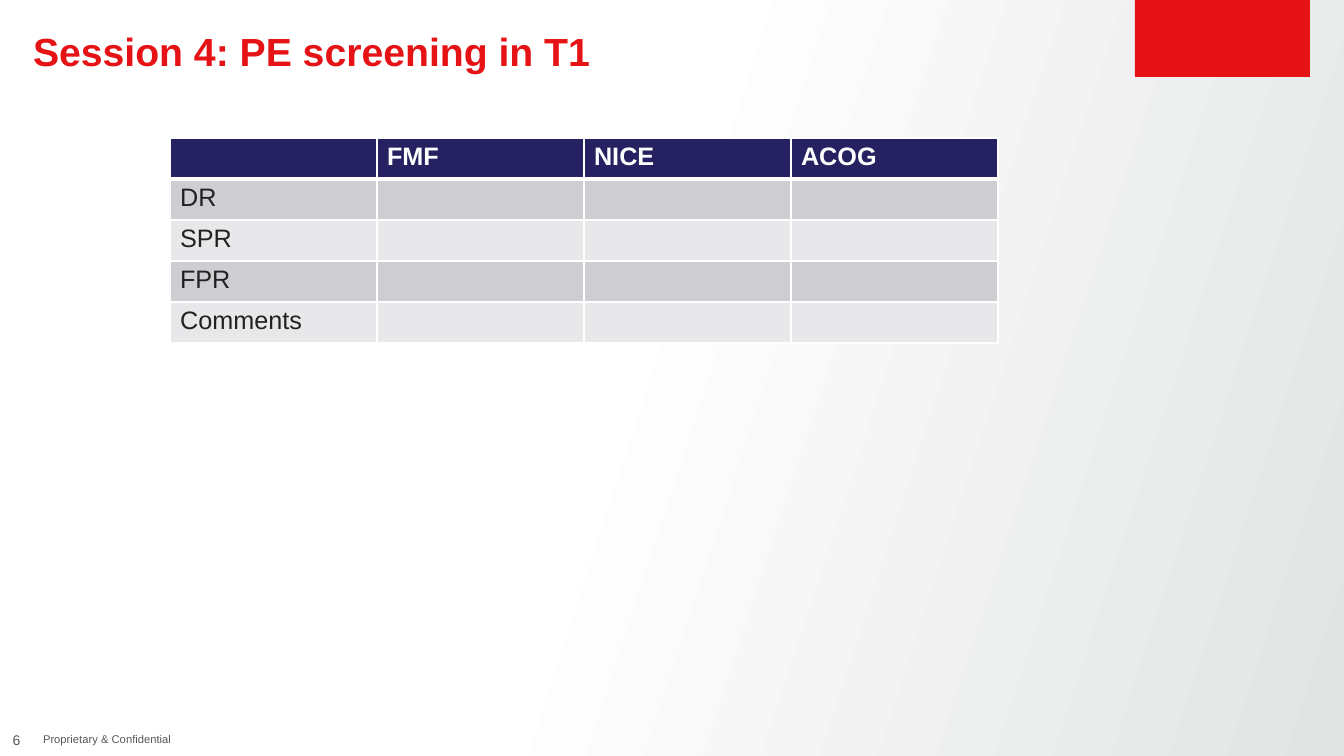
from copy import deepcopy

from lxml import etree
from pptx import Presentation
from pptx.dml.color import RGBColor
from pptx.enum.shapes import MSO_SHAPE
from pptx.enum.text import MSO_ANCHOR, PP_ALIGN
from pptx.oxml.ns import qn
from pptx.util import Emu, Pt

TOP, MIDDLE = MSO_ANCHOR.TOP, MSO_ANCHOR.MIDDLE
LEFT, CENTER = PP_ALIGN.LEFT, PP_ALIGN.CENTER
RECTANGLE = MSO_SHAPE.RECTANGLE

RED, NAVY, WHITE, GREY, INK = "E61316", "262160", "FFFFFF", "545859", "222222"
BANDS = ["CDCDD2", "E8E8EA"]
BACKGROUND_STOPS = [(0, WHITE), (0.45, WHITE), (1, "E2E3E3")]
BACKGROUND_ANGLE = 342  # counter-clockwise degrees

TITLE_FONT = {"size": 28, "bold": True, "color": RED}
NUMBER_FONT = {"size": 10, "color": GREY}
FOOTER_FONT = {"size": 8, "color": GREY}
HEADER_FONT = {"size": 18, "bold": True, "color": WHITE}
BODY_FONT = {"size": 18, "bold": False, "color": INK}

# text, box in px, font, anchor, alignment, side inset in px, line spacing
TEXTS = [
    ("Session 4: PE screening in T1", (33, 33, 1076, 42), TITLE_FONT, TOP, LEFT, 0, 0.9),
    ("6", (0, 723, 33, 33), NUMBER_FONT, MIDDLE, CENTER, 0, 1.0),
    ("Proprietary & Confidential", (33, 723, 495, 33), FOOTER_FONT, MIDDLE, LEFT, 10, 1.0),
]
RED_TAB = (1135, 0, 175, 77)

TABLE_ROWS = [
    ["", "FMF", "NICE", "ACOG"],
    ["DR", "", "", ""],
    ["SPR", "", "", ""],
    ["FPR", "", "", ""],
    ["Comments", "", "", ""],
]
TABLE_LEFT, TABLE_TOP, COLUMN_WIDTH, ROW_HEIGHT = 170, 138, 207, 41


def px(n):
    return Emu(round(n * 914400 / 100.8))


def rgb(color):
    return RGBColor.from_string(color)


def set_font(font, values):
    font.name = "Arial"
    for name, value in values.items():
        if name == "color":
            font.color.rgb = rgb(value)
        else:
            setattr(font, name, Pt(value) if name == "size" else value)


def paint_background(slide):
    fill = slide.background.fill
    fill.gradient()
    fill.gradient_angle = BACKGROUND_ANGLE
    first = next(slide.element.iter(qn("a:gs")))
    first.addnext(deepcopy(first))
    for stop, (position, color) in zip(fill.gradient_stops, BACKGROUND_STOPS):
        stop.position = position
        stop.color.rgb = rgb(color)


def add_text(slide, text, box, font, anchor, align, inset, spacing):
    tf = slide.shapes.add_textbox(*map(px, box)).text_frame
    tf.word_wrap = True
    tf.vertical_anchor = anchor
    tf.margin_left = tf.margin_right = px(inset)
    tf.margin_top = tf.margin_bottom = 0
    p = tf.paragraphs[0]
    p.alignment = align
    p.line_spacing = spacing
    r = p.add_run()
    r.text = text
    set_font(r.font, font)


def set_borders(cell, widths):
    """Draw white cell borders; widths maps L, R, T and B to points."""
    tc_pr = cell._tc.get_or_add_tcPr()
    for i, (side, width) in enumerate(widths.items()):
        ln = etree.Element(qn(f"a:ln{side}"), w=str(Pt(width)))
        fill = etree.SubElement(ln, qn("a:solidFill"))
        etree.SubElement(fill, qn("a:srgbClr"), val=WHITE)
        tc_pr.insert(i, ln)


def add_results_table(slide):
    rows, cols = len(TABLE_ROWS), len(TABLE_ROWS[0])
    box = (TABLE_LEFT, TABLE_TOP, cols * COLUMN_WIDTH, rows * ROW_HEIGHT)
    table = slide.shapes.add_table(rows, cols, *map(px, box)).table
    for column in table.columns:
        column.width = px(COLUMN_WIDTH)
    for i, texts in enumerate(TABLE_ROWS):
        table.rows[i].height = px(ROW_HEIGHT)
        for j, text in enumerate(texts):
            cell = table.cell(i, j)
            cell.fill.solid()
            cell.fill.fore_color.rgb = rgb(BANDS[(i - 1) % 2] if i else NAVY)
            set_borders(cell, {"L": 1, "R": 1, "T": 3 if i == 1 else 1, "B": 1 if i else 3})
            p = cell.text_frame.paragraphs[0]
            p.text = text
            set_font(p.font, BODY_FONT if i else HEADER_FONT)


def main():
    prs = Presentation()
    prs.slide_width, prs.slide_height = px(1344), px(756)
    slide = prs.slides.add_slide(prs.slide_layouts[6])
    paint_background(slide)

    sp = slide.shapes.add_shape(RECTANGLE, *map(px, RED_TAB))
    sp.shadow.inherit = False
    sp.fill.solid()
    sp.fill.fore_color.rgb = rgb(RED)
    sp.line.fill.background()

    for text in TEXTS:
        add_text(slide, *text)
    add_results_table(slide)
    prs.save("out.pptx")


if __name__ == "__main__":
    main()
